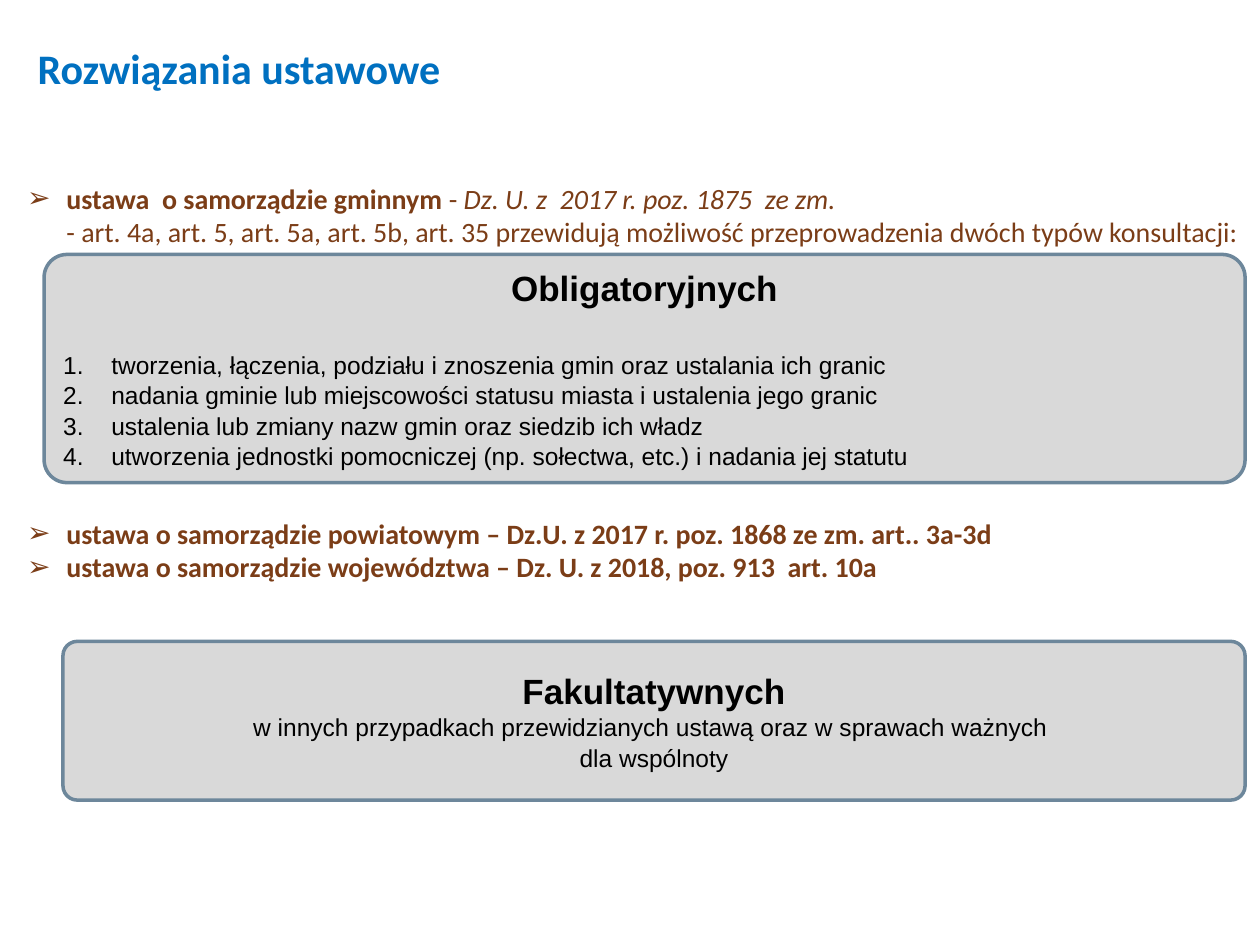
from lxml import etree
from pptx import Presentation
from pptx.dml.color import RGBColor
from pptx.enum.shapes import MSO_SHAPE
from pptx.enum.text import MSO_ANCHOR, PP_ALIGN
from pptx.oxml.ns import qn
from pptx.util import Cm, Pt

ROUND = MSO_SHAPE.ROUNDED_RECTANGLE
TOP, MIDDLE = MSO_ANCHOR.TOP, MSO_ANCHOR.MIDDLE
LEFT, CENTER = PP_ALIGN.LEFT, PP_ALIGN.CENTER

COLORS = {"title": "0070C0", "law": "7B3D17", "text": "000000",
          "panel": "D9D9D9", "edge": "6D879B"}

# Runs are (text, style); style holds "b" for bold, "i" for italic.
# A line feed in a run is a line break.
TITLE = [("Rozwiązania ustawowe", "b")]
LAWS = [
    [("ustawa  o samorządzie gminnym ", "b"), ("- ", ""),
     ("Dz. U. z  2017 r. poz. 1875  ze zm.  \n", "i"),
     ("- art. 4a, art. 5, art. 5a, art. 5b, art. 35 przewidują możliwość "
      "przeprowadzenia dwóch typów konsultacji:", "")],
    [("ustawa o samorządzie powiatowym – Dz.U. z 2017 r. poz. 1868 "
      "ze zm. art.. 3a-3d", "b")],
    [("ustawa o samorządzie województwa – Dz. U. z 2018, poz. 913  "
      "art. 10a", "b")],
]
LAW_GAPS = [0, 153, 0]
MUST = {
    "head": "Obligatoryjnych",
    "items": [
        "tworzenia, łączenia, podziału i znoszenia gmin oraz ustalania ich granic",
        "nadania gminie lub miejscowości statusu miasta i ustalenia jego granic",
        "ustalenia lub zmiany nazw gmin oraz siedzib ich władz",
        "utworzenia jednostki pomocniczej (np. sołectwa, etc.) i nadania jej statutu",
    ],
}
MAY = {
    "head": "Fakultatywnych",
    "note": "w innych przypadkach przewidzianych ustawą oraz w sprawach "
            "ważnych \ndla wspólnoty",
}


def paint(hue):
    return RGBColor.from_string(COLORS[hue])


def start(frame, anchor):
    frame.word_wrap = True
    frame.vertical_anchor = anchor
    return frame


def mark(para, indent, tag, **attrs):
    """Give a paragraph a hanging indent and a bullet or number."""
    props = para._p.get_or_add_pPr()
    props.set("marL", str(Cm(indent)))
    props.set("indent", str(-Cm(indent)))
    font = etree.SubElement(props, qn("a:buFont"))
    font.set("typeface", "Arial")
    etree.SubElement(props, qn(tag), attrs)


def write(frame, runs, face, size, hue, align=LEFT):
    """Add a paragraph, using the empty first one if it is free."""
    para = frame.paragraphs[-1]
    if para.runs:
        para = frame.add_paragraph()
    para.alignment = align
    for text, style in runs:
        for n, part in enumerate(text.split("\n")):
            if n:
                para.add_line_break()
            if not part:
                continue
            run = para.add_run()
            run.text = part
            font = run.font
            font.name, font.size = face, Pt(size)
            font.bold, font.italic = "b" in style, "i" in style
            font.color.rgb = paint(hue)
    return para


def label(slide, left, top, width, height):
    box = slide.shapes.add_textbox(Cm(left), Cm(top), Cm(width), Cm(height))
    return start(box.text_frame, TOP)


def panel(slide, left, top, width, height, curve, head):
    """Draw a grey rounded box with a bold heading."""
    box = slide.shapes.add_shape(ROUND, Cm(left), Cm(top), Cm(width), Cm(height))
    box.adjustments[0] = curve
    box.shadow.inherit = False
    box.fill.solid()
    box.fill.fore_color.rgb = paint("panel")
    box.line.color.rgb = paint("edge")
    box.line.width = Pt(2)
    frame = start(box.text_frame, MIDDLE)
    write(frame, [(head, "b")], "Arial", 20, "text", CENTER)
    return frame


def main():
    deck = Presentation()
    deck.slide_width, deck.slide_height = Cm(25.4), Cm(19.05)
    slide = deck.slides.add_slide(deck.slide_layouts[6])

    write(label(slide, 0.51, 0.74, 18.21, 2.21), TITLE, "Calibri", 24, "title")

    body = label(slide, 0.3, 3.53, 25.1, 13.51)
    for runs, gap in zip(LAWS, LAW_GAPS):
        para = write(body, runs, "Calibri", 16, "law")
        if gap:
            para.space_before = Pt(gap)
        mark(para, 0.79, "a:buChar", char="➢")

    may = panel(slide, 1.27, 12.93, 23.83, 3.2, 0.09, MAY["head"])
    note = write(may, [(MAY["note"], "")], "Arial", 14, "text", CENTER)
    note.line_spacing = 1.04

    must = panel(slide, 0.89, 5.13, 24.21, 4.6, 0.1, MUST["head"])
    must.paragraphs[0].space_after = Pt(23)
    for item in MUST["items"]:
        para = write(must, [(item, "")], "Arial", 14, "text")
        para.line_spacing = 1.04
        mark(para, 0.97, "a:buAutoNum", type="arabicPeriod")

    deck.save("out.pptx")


if __name__ == "__main__":
    main()
